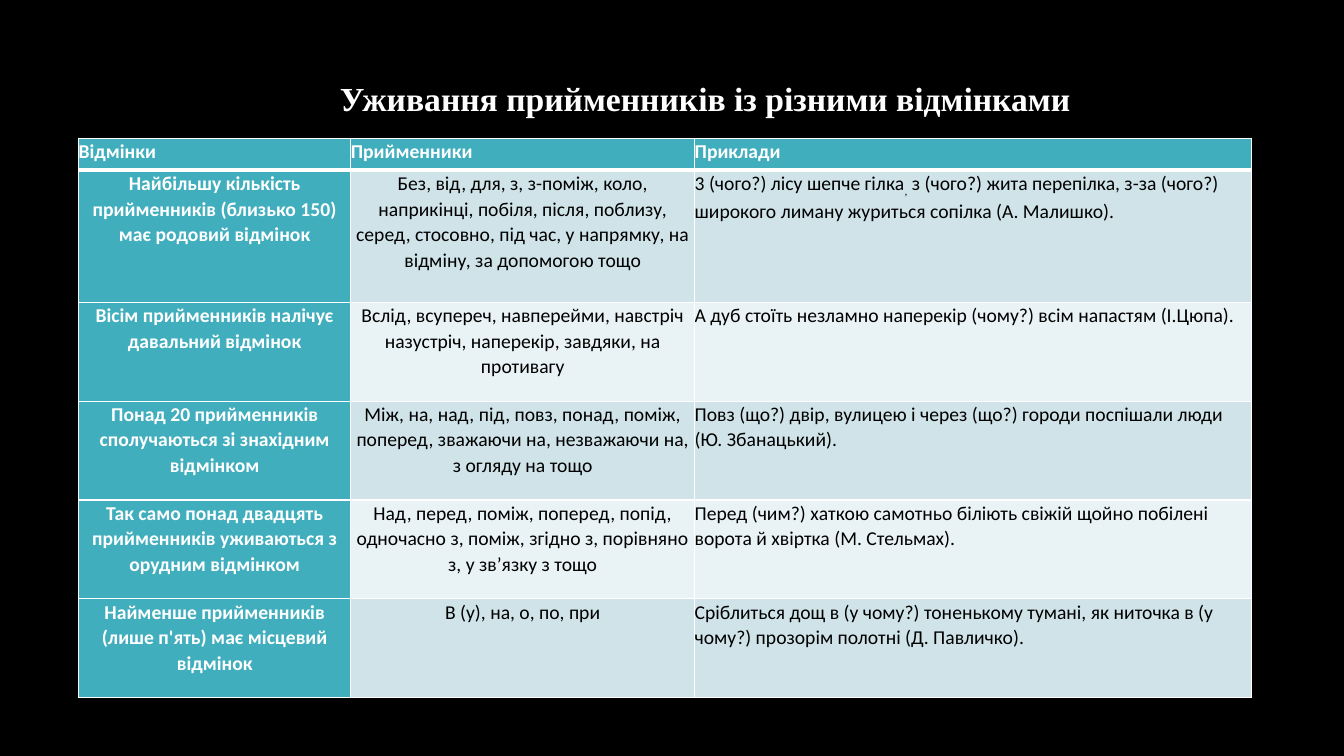
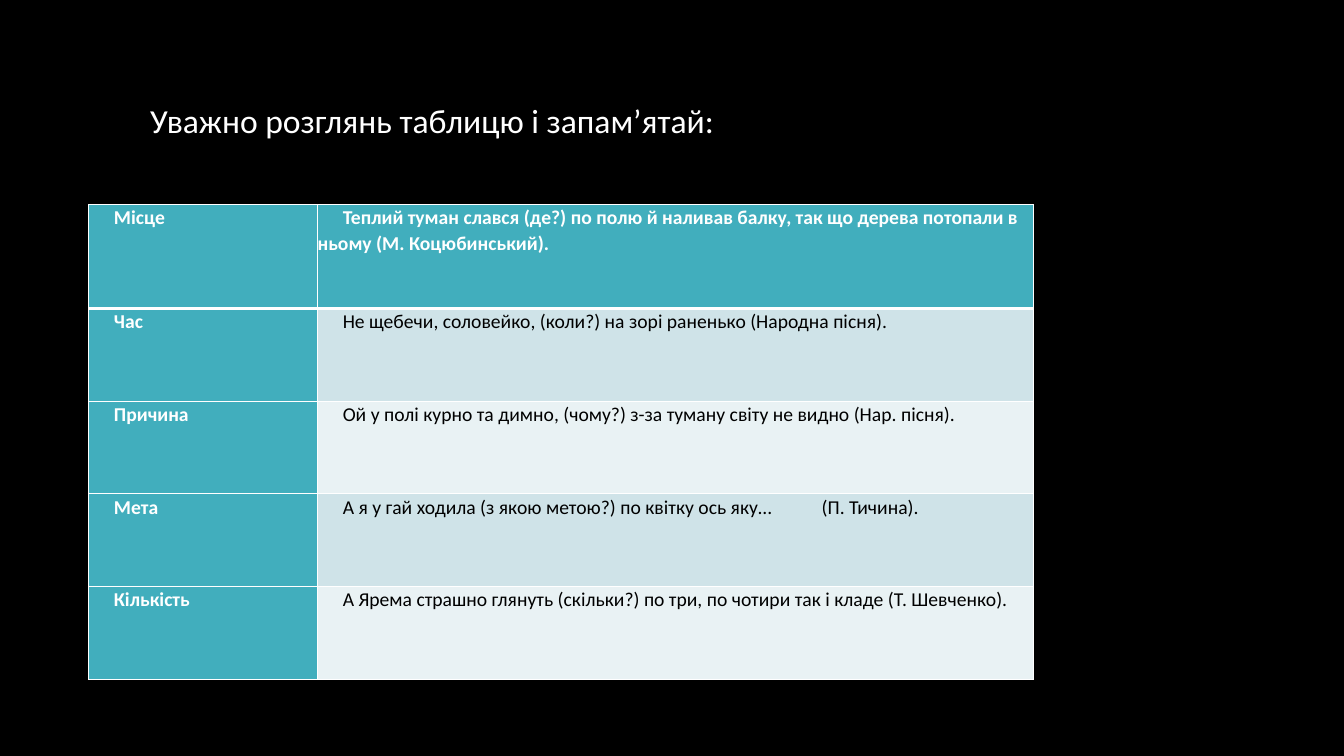
from dataclasses import dataclass

from lxml import etree
from pptx import Presentation
from pptx import util as u
from pptx.dml import color
from pptx.enum import text
from pptx.oxml import ns

COLORS = {
    "background": "000000",
    "light_text": "FFFFFF",
    "dark_text": "000000",
    "border": "FFFFFF",
    "heading": "41AEBD",
    "odd_row": "CFE3E8",
    "even_row": "E9F2F4",
}
CELL_FORMAT = {"name": "Calibri", "size": u.Pt(14)}
TITLE_FORMAT = {"size": u.Pt(24)}
PARAGRAPH_FORMAT = {"line_spacing": 1.07, "space_after": u.Pt(8)}
MARGINS = ("margin_left", "margin_top", "margin_right", "margin_bottom")
LEFT, CENTER = text.PP_ALIGN.LEFT, text.PP_ALIGN.CENTER


@dataclass(frozen=True)
class Title:
    words: str
    left: float
    top: float
    width: float
    font: str
    bold: bool


@dataclass(frozen=True)
class Grid:
    left: float
    top: float
    columns: tuple[float, ...]
    rows: tuple[float, ...]
    cells: tuple[tuple, ...]
    alignments: tuple
    indent: float = 0
    tab: float = 0


@dataclass(frozen=True)
class Page:
    title: Title
    grid: Grid


PAGES = (
    Page(
        Title("Уживання прийменників із різними відмінками", 3.27, 0.72, 8, "Times New Roman", True),
        Grid(
            0.78, 1.37, (2.7, 3.41, 5.52), (0.32, 1.31) + (0.98,) * 4,
            (
                ("Відмінки", "Прийменники", "Приклади"),
                (
                    "Найбільшу кількість прийменників (близько 150) має родовий відмінок",
                    "Без, від, для, з, з-поміж, коло, наприкінці, побіля, після, поблизу, серед, "
                    "стосовно, під час, у напрямку, на відміну, за допомогою тощо",
                    (
                        "3 (чого?) лісу шепче гілка",
                        ",",
                        " з (чого?) жита перепілка, з-за (чого?) широкого лиману "
                        "журиться сопілка (А. Малишко).",
                    ),
                ),
                (
                    "Вісім прийменників налічує давальний відмінок",
                    "Вслід, всупереч, навперейми, навстріч назустріч, наперекір, завдяки, на противагу",
                    "А дуб стоїть незламно наперекір (чому?) всім напастям (І.Цюпа).",
                ),
                (
                    "Понад 20 прийменників сполучаються зі знахідним відмінком",
                    "Між, на, над, під, повз, понад, поміж, поперед, зважаючи на, незважаючи на, "
                    "з огляду на тощо",
                    "Повз (що?) двір, вулицею і через (що?) городи поспішали люди (Ю. Збанацький).",
                ),
                (
                    "Так само понад двадцять прийменників уживаються з орудним відмінком",
                    "Над, перед, поміж, поперед, попід, одночасно з, поміж, згідно з, порівняно з, "
                    "у зв’язку з тощо",
                    "Перед (чим?) хаткою самотньо біліють свіжій щойно побілені ворота й хвіртка "
                    "(М. Стельмах).",
                ),
                (
                    "Найменше прийменників (лише п'ять) має місцевий відмінок",
                    "В (у), на, о, по, при",
                    "Сріблиться дощ в (у чому?) тоненькому тумані, як ниточка в (у чому?) "
                    "прозорім полотні (Д. Павличко).",
                ),
            ),
            (CENTER, CENTER, LEFT),
        ),
    ),
    Page(
        Title("Уважно розглянь таблицю і запам’ятай:", 1.39, 0.94, 7, "Calibri", False),
        Grid(
            0.88, 2.03, (2.27, 7.1), (1.03,) + (0.92,) * 4,
            (
                (
                    "Місце",
                    "Теплий туман слався (де?) по полю й наливав балку, так що дерева потопали "
                    "в ньому (М. Коцюбинський).",
                ),
                ("Час", "Не щебечи, соловейко, (коли?) на зорі раненько (Народна пісня)."),
                (
                    "Причина",
                    "Ой у полі курно та димно, (чому?) з-за туману світу не видно (Нар. пісня).",
                ),
                ("Мета", "А я у гай ходила (з якою метою?) по квітку ось яку...\t(П. Тичина)."),
                (
                    "Кількість",
                    "А Ярема страшно глянуть (скільки?) по три, по чотири так і кладе (Т. Шевченко).",
                ),
            ),
            (LEFT, LEFT),
            indent=0.25,
            tab=4.7,
        ),
    ),
)


def rgb(name: str) -> color.RGBColor:
    return color.RGBColor.from_string(COLORS[name])


def apply_format(target, values: dict) -> None:
    for name, value in values.items():
        setattr(target, name, value)


def add_child(parent, tag: str, **attributes):
    return etree.SubElement(parent, ns.qn(tag), attributes)


def add_borders(cell, row: int) -> None:
    properties = cell._tc.get_or_add_tcPr()
    widths = {"L": 1, "R": 1, "T": 3 if row == 1 else 1, "B": 3 if row == 0 else 1}
    for side, width in widths.items():
        line = add_child(properties, f"a:ln{side}", w=str(u.Pt(width)))
        add_child(add_child(line, "a:solidFill"), "a:srgbClr", val=COLORS["border"])


def write_cell(cell, content: str | tuple, grid: Grid, row: int, column: int) -> None:
    heading = row == 0 or column == 0
    add_borders(cell, row)
    cell.fill.solid()
    cell.fill.fore_color.rgb = rgb("heading" if heading else "odd_row" if row % 2 else "even_row")
    apply_format(cell, dict.fromkeys(MARGINS, 0))
    paragraph = cell.text_frame.paragraphs[0]
    apply_format(paragraph, PARAGRAPH_FORMAT)
    paragraph.alignment = LEFT if row == 0 else grid.alignments[column]
    properties = paragraph._p.get_or_add_pPr()
    if grid.indent:
        properties.set("marL", "0")
        properties.set("indent", str(u.Inches(grid.indent)))
    pieces = (content,) if isinstance(content, str) else content
    if any("\t" in piece for piece in pieces):
        add_child(add_child(properties, "a:tabLst"), "a:tab", pos=str(u.Inches(grid.tab)), algn="l")
    for number, piece in enumerate(pieces):
        run = paragraph.add_run()
        run.text = piece
        apply_format(run.font, CELL_FORMAT | {"bold": heading})
        run.font.color.rgb = rgb("light_text" if heading else "dark_text")
        if number % 2:
            run.font._element.set("baseline", "-25000")


def add_grid(slide, grid: Grid) -> None:
    box = (grid.left, grid.top, sum(grid.columns), sum(grid.rows))
    table = slide.shapes.add_table(
        len(grid.rows), len(grid.columns), *map(u.Inches, box)
    ).table
    apply_format(table, {"first_row": False, "horz_banding": False})
    for column, width in zip(table.columns, grid.columns):
        column.width = u.Inches(width)
    for row, height in zip(table.rows, grid.rows):
        row.height = u.Inches(height)
    for row, contents in enumerate(grid.cells):
        for column, content in enumerate(contents):
            write_cell(table.cell(row, column), content, grid, row, column)


def format_title(slide, title: Title) -> None:
    shape = slide.shapes.title
    box = {"left": title.left, "top": title.top, "width": title.width, "height": 0.5}
    apply_format(shape, {name: u.Inches(value) for name, value in box.items()})
    frame = shape.text_frame
    frame.text = title.words
    apply_format(frame, {
        "word_wrap": True,
        "auto_size": text.MSO_AUTO_SIZE.NONE,
        "vertical_anchor": text.MSO_ANCHOR.MIDDLE,
    })
    paragraph = frame.paragraphs[0]
    apply_format(paragraph, {"alignment": LEFT, "line_spacing": 1.0})
    font = paragraph.runs[0].font
    apply_format(font, TITLE_FORMAT | {"name": title.font, "bold": title.bold})
    font.color.rgb = rgb("light_text")


def main() -> None:
    presentation = Presentation()
    presentation.slide_width = u.Inches(13.33)
    presentation.slide_height = u.Inches(7.5)
    background = presentation.slide_master.background.fill
    background.solid()
    background.fore_color.rgb = rgb("background")
    for page in PAGES:
        slide = presentation.slides.add_slide(presentation.slide_layouts[5])
        format_title(slide, page.title)
        add_grid(slide, page.grid)
    presentation.save("out.pptx")


if __name__ == "__main__":
    main()
